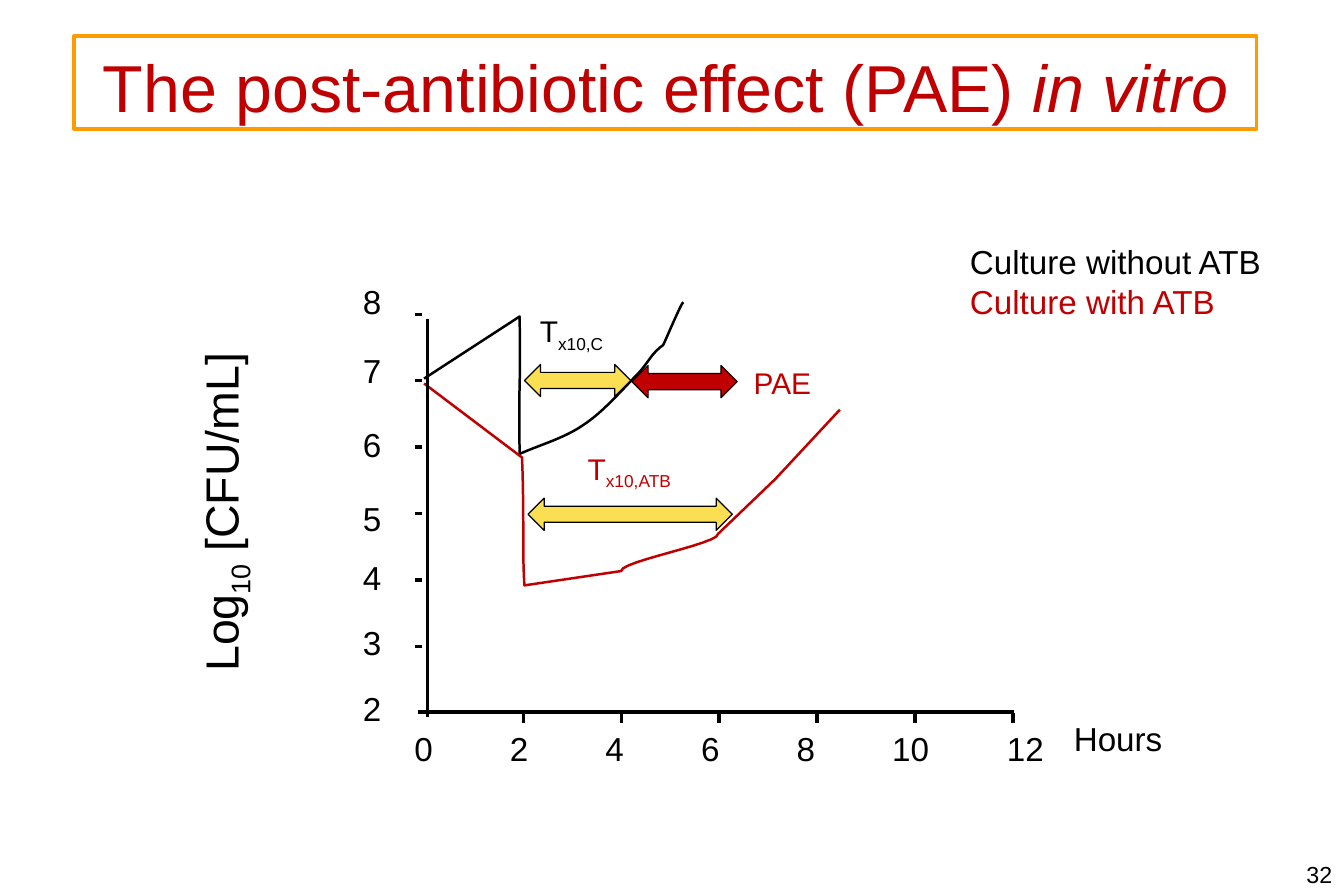
from dataclasses import dataclass

from lxml.etree import SubElement
from pptx import Presentation
from pptx.dml.color import RGBColor
from pptx.enum.shapes import MSO_CONNECTOR, MSO_SHAPE
from pptx.enum.text import MSO_AUTO_SIZE, PP_ALIGN
from pptx.oxml.ns import qn
from pptx.util import Pt

PX = 9144  # 100 px to the inch


@dataclass(frozen=True)
class Theme:
    font: str = "Arial"
    black: str = "000000"
    red: str = "C00000"
    yellow: str = "FBDF53"
    orange: str = "FE9B03"
    title: int = 40
    axis_title: int = 28
    label: int = 20
    note: int = 18
    page_number: int = 14


THEME = Theme()


def emu(*lengths):
    return [round(length * PX) for length in lengths]


def rgb(colour):
    return RGBColor.from_string(colour)


def set_line(shape, colour, width):
    shape.line.color.rgb = rgb(colour)
    shape.line.width = Pt(width)


def style_para(para, size, colour, align=PP_ALIGN.LEFT):
    para.font.name = THEME.font
    para.font.size = Pt(size)
    para.font.color.rgb = rgb(colour)
    para.alignment = align


def add_span(para, text, subscript=False):
    span = para.add_run()
    span.text = text
    if subscript:
        span.font._element.set("baseline", "-25000")
    return span


def add_label(page, at, lines, size=THEME.label, grow=True, align=PP_ALIGN.LEFT):
    """Each line is (colour, text, subscript, text, ...)."""
    box = page.shapes.add_textbox(*emu(*at))
    frame = box.text_frame
    frame.word_wrap = not grow
    if grow:
        frame.auto_size = MSO_AUTO_SIZE.SHAPE_TO_FIT_TEXT
    for row, (colour, *texts) in enumerate(lines):
        para = frame.add_paragraph() if row else frame.paragraphs[0]
        style_para(para, size, colour, align)
        for part, text in enumerate(texts):
            add_span(para, text, subscript=part % 2 == 1)
    return box


def add_rule(page, *ends):
    rule = page.shapes.add_connector(MSO_CONNECTOR.STRAIGHT, *emu(*ends))
    set_line(rule, THEME.black, 2)
    SubElement(rule._element.spPr, qn("a:effectLst"))


def bezier(points, steps=12):
    for step in range(1, steps + 1):
        t = step / steps
        weights = ((1 - t) ** 3, 3 * t * (1 - t) ** 2, 3 * t**2 * (1 - t), t**3)
        yield tuple(sum(w * p[axis] for w, p in zip(weights, points)) for axis in (0, 1))


def add_curve(page, colour, start, *segments):
    """A segment is one point for a straight line, three for a cubic curve."""
    points = [start]
    for segment in segments:
        if len(segment) == 1:
            points += segment
        else:
            points += list(bezier((points[-1], *segment)))
    builder = page.shapes.build_freeform(*emu(*start))
    builder.add_line_segments([emu(*point) for point in points[1:]], close=False)
    curve = builder.convert_to_shape()
    curve.shadow.inherit = False
    curve.fill.background()
    set_line(curve, colour, 1.5)


def add_span_arrow(page, at, colour):
    arrow = page.shapes.add_shape(MSO_SHAPE.LEFT_RIGHT_ARROW, *emu(*at))
    arrow.shadow.inherit = False
    arrow.fill.solid()
    arrow.fill.fore_color.rgb = rgb(colour)
    set_line(arrow, THEME.black, 0.75)


def add_title(page):
    box = page.shapes.add_shape(MSO_SHAPE.RECTANGLE, *emu(62, 30, 990, 78))
    box.shadow.inherit = False
    box.fill.background()
    set_line(box, THEME.orange, 2)
    box.text_frame.word_wrap = True
    box.text_frame.auto_size = MSO_AUTO_SIZE.SHAPE_TO_FIT_TEXT
    para = box.text_frame.paragraphs[0]
    style_para(para, THEME.title, THEME.red, PP_ALIGN.CENTER)
    para.line_spacing = 1.1
    add_span(para, "The post-antibiotic effect (PAE) ")
    add_span(para, "in vitro").font.italic = True


def add_axes(page):
    add_rule(page, 358, 267, 358, 600)
    add_rule(page, 350, 596, 849, 596)
    for tick in range(6):
        x = 438 + 82 * tick
        add_rule(page, x, 597, x, 605)
        y = 263 + 55.6 * tick
        add_rule(page, 347, y, 353, y)

    # Axis numbers
    for number, top in zip(range(8, 1, -1), (231, 288, 350, 412, 462, 516, 571)):
        add_label(page, (294, top, 36, 44), [(THEME.black, str(number))])
    for hour, left in zip(range(0, 13, 2), (337, 417, 497, 577, 657, 737, 833)):
        width = 36 if hour < 10 else 51
        add_label(page, (left, 605, width, 40), [(THEME.black, str(hour))])

    # Axis titles
    add_label(page, (889, 596, 114, 40), [(THEME.black, "Hours")])
    log_title = add_label(page, (32, 391, 305, 57),
                          [(THEME.black, "Log", "10", " [CFU/mL]")], THEME.axis_title)
    log_title.rotation = 270


def add_cultures(page):
    # Without antibiotic
    add_curve(page, THEME.black, (355, 317),
              [(435, 265)],
              [(436, 327), (434, 318), (435, 380)],
              [(453, 372), (472, 367), (488, 356)],
              [(505, 345), (521, 326), (532, 315)],
              [(543, 304), (544, 297), (555, 289)],
              [(556, 288), (570, 254), (572, 253)])
    # With antibiotic
    add_curve(page, THEME.red, (355, 321),
              [(437, 383)],
              [(439, 435), (437, 460), (439, 490)],
              [(520, 478)],
              [(519, 470), (602, 455), (601, 447)],
              [(649, 401)],
              [(703, 343)])
    add_label(page, (802, 197, 266, 77),
              [(THEME.black, "Culture without ATB"), (THEME.red, "Culture with ATB")])


def add_durations(page):
    add_span_arrow(page, (439, 305, 89, 27), THEME.yellow)
    add_span_arrow(page, (442, 417, 171, 27), THEME.yellow)
    add_span_arrow(page, (529, 306, 88, 27), THEME.red)
    add_label(page, (482, 372, 99, 40), [(THEME.red, "T", "x10,ATB")], THEME.note)
    add_label(page, (442, 257, 84, 40), [(THEME.black, "T", "x10,C")], THEME.note)
    add_label(page, (621, 300, 69, 40), [(THEME.red, "PAE")], THEME.note)


def main():
    deck = Presentation()
    deck.slide_width, deck.slide_height = emu(1125, 750)
    page = deck.slides.add_slide(deck.slide_layouts[6])
    add_cultures(page)
    add_axes(page)
    add_durations(page)
    add_title(page)
    add_label(page, (834, 715, 291, 35), [(THEME.black, "32")],
              THEME.page_number, grow=False, align=PP_ALIGN.RIGHT)
    deck.save("out.pptx")


if __name__ == "__main__":
    main()
